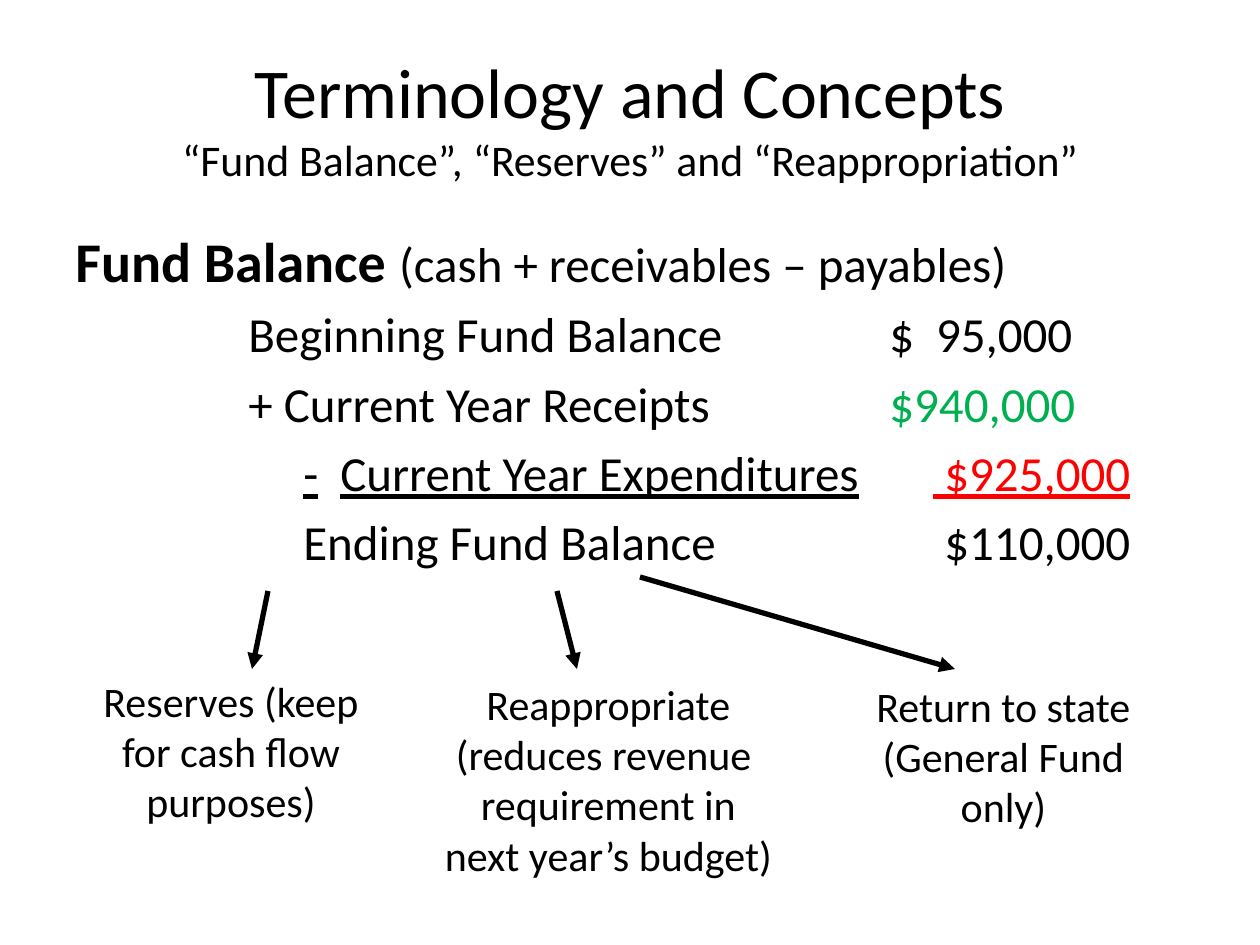
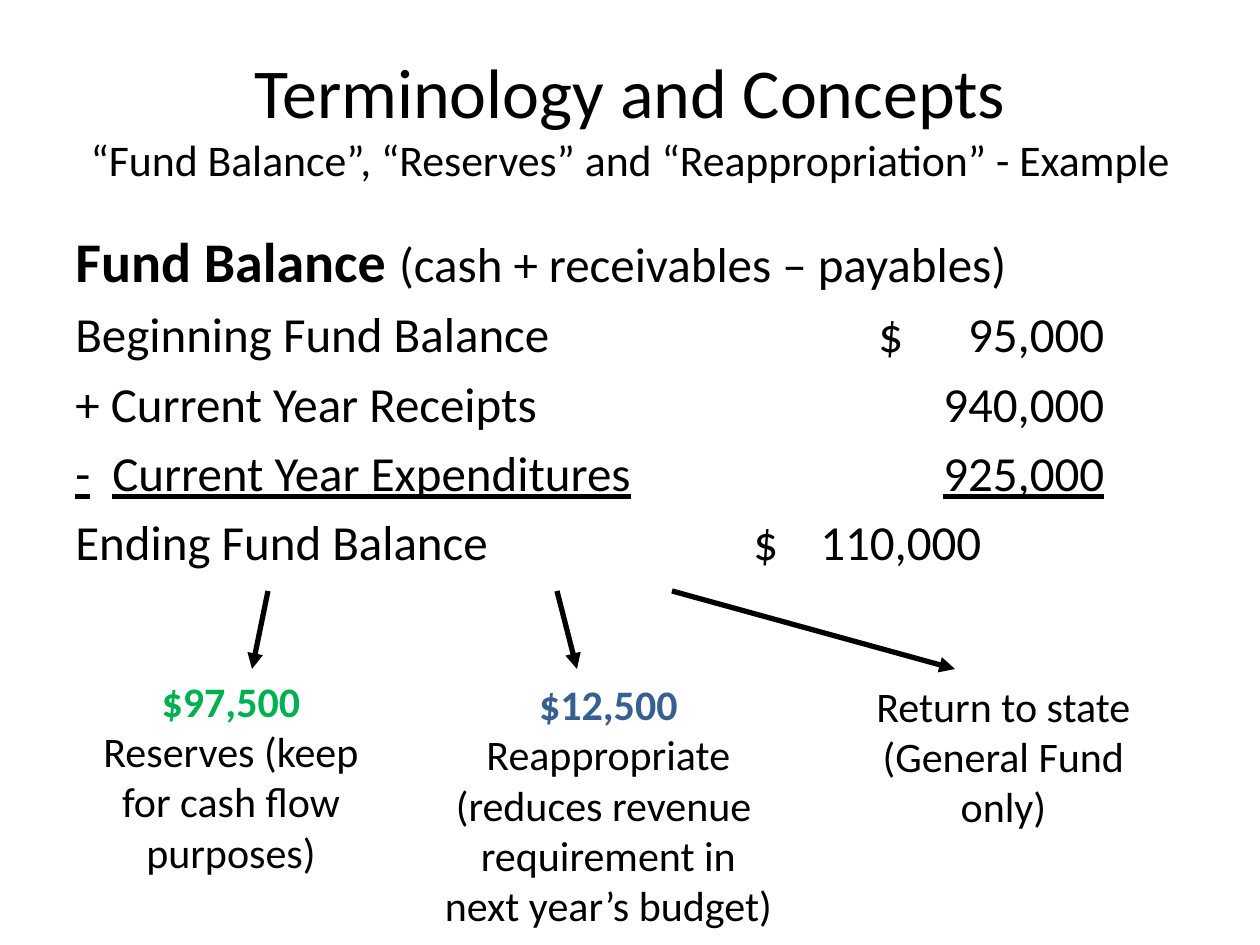
from lxml import etree
from pptx import Presentation
from pptx import util as u
from pptx.dml.color import RGBColor
from pptx.enum import shapes, text
from pptx.oxml.ns import qn

PX = 914400 / 126
FONT = "Calibri"
BLACK, GREEN, RED, BLUE = "000000", "00B050", "FF0000", "376092"


def rgb(color):
    return RGBColor.from_string(color)


def add_text(s, box, paragraphs, align, wrap=True):
    """Each paragraph is (size, tab stops, runs); each run is (text, font settings)."""
    tf = s.shapes.add_textbox(*[u.Emu(round(v * PX)) for v in box]).text_frame
    tf.word_wrap = wrap
    for i, (size, tabs, runs) in enumerate(paragraphs):
        p = tf.paragraphs[0] if i == 0 else tf.add_paragraph()
        if tabs:
            tab_list = etree.SubElement(p._p.get_or_add_pPr(), qn("a:tabLst"))
            for kind, pos in tabs:
                etree.SubElement(tab_list, qn("a:tab"), pos=str(round(pos * PX)), algn=kind)
        p.alignment = align
        p.font.size, p.font.name = u.Pt(size), FONT
        p.font.color.rgb = rgb(BLACK)
        for content, style in runs:
            r = p.add_run()
            r.text = content
            for key, value in style.items():
                if key == "color":
                    r.font.color.rgb = rgb(value)
                else:
                    setattr(r.font, key, value)
    return tf


CENTER, LEFT = text.PP_ALIGN.CENTER, text.PP_ALIGN.LEFT
PLAIN, LINED = {}, {"underline": True}
TITLE = "Terminology and Concepts"
SUBTITLE = "“Fund Balance”, “Reserves” and “Reappropriation”"
HEADING = (32, [], [("Fund Balance ", {"bold": True}),
                    ("(cash + receivables – payables)", {"size": u.Pt(28)})])

# Tab stops of the calculation rows, measured from the text edge
outer = [("l", 173), ("l", 803), ("r", 997)]
inner = [("l", 228), ("l", 858)]
minus = [("l", 228), ("l", 265), ("l", 858)]
amounts = [("l", 803), ("r", 1029)]
total = [("l", 678), ("r", 906)]

concept_rows = [
    (outer, [("\tBeginning Fund Balance\t $\t95,000", PLAIN)]),
    (outer, [("\t+ Current Year Receipts\t", PLAIN), (" $940,000", {"color": GREEN})]),
    (minus, [("\t", PLAIN), ("-\tCurrent Year Expenditures", LINED), ("\t", PLAIN),
             (" $925,000", {"color": RED, "underline": True})]),
    (inner, [("\tEnding Fund Balance\t $110,000", PLAIN)]),
]
example_rows = [
    (amounts, [("Beginning Fund Balance\t$\t95,000", PLAIN)]),
    (amounts, [("+ Current Year Receipts\t\t940,000", PLAIN)]),
    ([("l", 37)] + amounts, [("-\tCurrent Year Expenditures", LINED), ("\t", PLAIN),
                             ("\t925,000", LINED)]),
    (total, [("Ending Fund Balance\t$\t110,000", PLAIN)]),
]

# Uses of the ending balance: left, top, width, height, wrap, lines
uses = [
    (63, 669, 336, 165, True, ["Reserves (keep for cash flow purposes)"]),
    (431, 672, 355, 217, False, ["Reappropriate", "(reduces revenue ",
                                 "requirement in", "next year’s budget)"]),
    (851, 674, 305, 165, True, ["Return to state (General Fund only)"]),
]
AMOUNT_HEIGHT = 51

# Subtitle, calculation rows, start of the last arrow, amount above each use
slides = [
    (SUBTITLE, concept_rows, (640, 577), [None, None, None]),
    (SUBTITLE + " - Example", example_rows, (672, 591),
     [("$97,500", GREEN), ("$12,500", BLUE), None]),
]

prs = Presentation()
prs.slide_width, prs.slide_height = u.Inches(10), u.Inches(7.5)

for subtitle, rows, last_start, use_amounts in slides:
    s = prs.slides.add_slide(prs.slide_layouts[6])

    # Title
    tf = add_text(s, (63, 38, 1134, 158),
                  [(40, [], [(TITLE, PLAIN)]), (25, [], [(subtitle, PLAIN)])], CENTER)
    tf.vertical_anchor = text.MSO_ANCHOR.MIDDLE

    # Calculation
    tf = add_text(s, (63, 220, 1134, 677),
                  [HEADING] + [(28, tabs, runs) for tabs, runs in rows], LEFT)
    for p in tf.paragraphs:
        p.space_after = u.Pt(6)

    # Arrows to the uses
    for start, end in [((268, 591), (252, 669)), ((557, 591), (577, 669)),
                       (last_start, (955, 669))]:
        line = s.shapes.add_connector(shapes.MSO_CONNECTOR.STRAIGHT,
                                      *[u.Emu(round(v * PX)) for v in start + end])
        line.line.color.rgb = rgb(BLACK)
        line.line.width = u.Pt(3)
        etree.SubElement(line.line._get_or_add_ln(), qn("a:tailEnd"), type="triangle")
        etree.SubElement(line._element.spPr, qn("a:effectLst"))

    # Uses of the balance
    for (x, y, w, h, wrap, lines), amount in zip(uses, use_amounts):
        paragraphs = [(24, [], [(content, PLAIN)]) for content in lines]
        if amount:
            value, color = amount
            paragraphs.insert(0, (24, [], [(value, {"bold": True, "color": color})]))
            h += AMOUNT_HEIGHT
        add_text(s, (x, y, w, h), paragraphs, CENTER, wrap)

prs.save("out.pptx")
